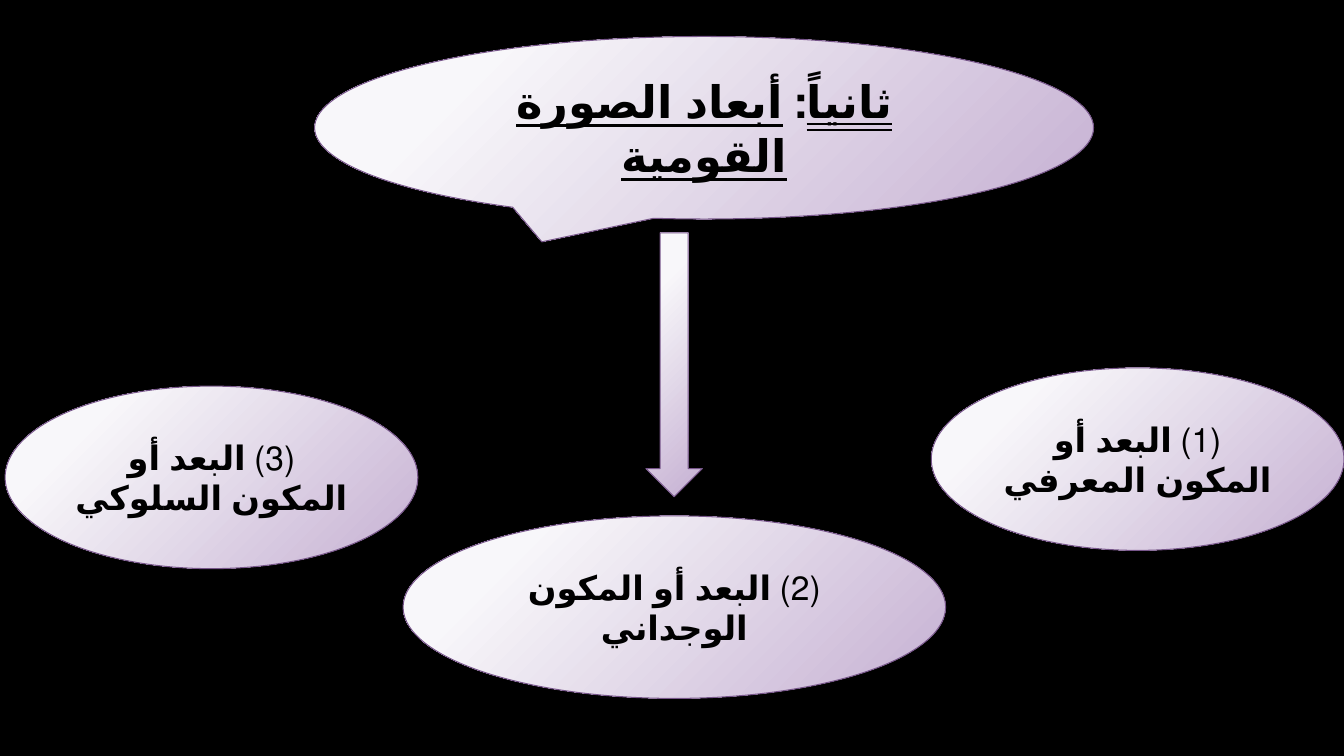
from dataclasses import dataclass

from pptx import Presentation
from pptx.dml.color import RGBColor
from pptx.enum.lang import MSO_LANGUAGE_ID
from pptx.enum.shapes import MSO_SHAPE
from pptx.enum.text import MSO_ANCHOR, MSO_UNDERLINE, PP_ALIGN
from pptx.oxml import parse_xml
from pptx.oxml.ns import nsdecls, qn
from pptx.util import Cm, Pt


@dataclass(frozen=True)
class Theme:
    background: RGBColor = RGBColor(0x00, 0x00, 0x00)
    text: RGBColor = RGBColor(0x00, 0x00, 0x00)
    outline: RGBColor = RGBColor(0x77, 0x56, 0x8A)
    stops: tuple = ((0.2, RGBColor(0xF8, 0xF7, 0xFA)),
                    (1.0, RGBColor(0xC5, 0xB0, 0xD2)))
    font: str = "TeX Gyre Pagella"
    title_size: Pt = Pt(32)
    label_size: Pt = Pt(24)


THEME = Theme()

GLOW_PATH = (f'<a:path {nsdecls("a")} path="circle">'
             '<a:fillToRect l="-15000" t="-15000" r="115000" b="115000"/></a:path>')
SOFT_SHADOW = (f'<a:outerShdw {nsdecls("a")} blurRad="130000" dist="101600" '
               'dir="2700000" algn="tl" rotWithShape="0">'
               '<a:srgbClr val="000000"><a:alpha val="35000"/></a:srgbClr></a:outerShdw>')


def add_glossy_shape(page, kind, left, top, width, height):
    """Add a shape with the lilac gradient, thin outline and soft shadow."""
    shape = page.shapes.add_shape(kind, Cm(left), Cm(top), Cm(width), Cm(height))
    shape.fill.gradient()
    for stop, (position, colour) in zip(shape.fill.gradient_stops, THEME.stops):
        stop.position = position
        stop.color.rgb = colour
    properties = shape._element.spPr
    gradient = properties.find(qn("a:gradFill"))
    gradient.replace(gradient.find(qn("a:lin")), parse_xml(GLOW_PATH))
    shape.line.color.rgb = THEME.outline
    shape.line.width = Pt(0.75)
    shape.shadow.inherit = False
    properties.find(qn("a:effectLst")).append(parse_xml(SOFT_SHADOW))
    return shape


def write_rtl(shape, size, spans):
    """Write one centred right-to-left paragraph of (text, bold, underline) spans."""
    frame = shape.text_frame
    frame.word_wrap = True
    frame.vertical_anchor = MSO_ANCHOR.MIDDLE
    para = frame.paragraphs[0]
    para.alignment = PP_ALIGN.CENTER
    para._p.get_or_add_pPr().set("rtl", "1")
    for text, bold, underline in spans:
        span = para.add_run()
        span.text = text
        span.font.language_id = MSO_LANGUAGE_ID.ARABIC_EGYPT
        span.font.name = THEME.font
        span.font.size = size
        span.font.color.rgb = THEME.text
        span.font.bold = bold
        span.font.underline = underline


def add_dimension(page, number, text, left, top, width):
    """Add a numbered ellipse."""
    ellipse = add_glossy_shape(page, MSO_SHAPE.OVAL, left, top, width, 4.6)
    write_rtl(ellipse, THEME.label_size,
              [(f"({number}) ", False, None), (text, True, None)])


def main():
    deck = Presentation()
    deck.slide_width, deck.slide_height = Cm(33.87), Cm(19.05)
    page = deck.slides.add_slide(deck.slide_layouts[6])
    page.background.fill.solid()
    page.background.fill.fore_color.rgb = THEME.background

    # Heading
    callout = add_glossy_shape(page, MSO_SHAPE.OVAL_CALLOUT, 7.93, 0.92, 19.63, 4.6)
    write_rtl(callout, THEME.title_size, [
        ("ثانياً", True, MSO_UNDERLINE.DOUBLE_LINE),
        (": ", True, False),
        ("أبعاد الصورة القومية", True, True),
    ])

    # Three dimensions
    dimensions = [
        ("البعد أو المكون المعرفي", 23.47, 9.27, 10.4),
        ("البعد أو المكون الوجداني", 10.16, 13.0, 13.67),
        ("البعد أو المكون السلوكي", 0.13, 9.73, 10.4),
    ]
    for number, dimension in enumerate(dimensions, start=1):
        add_dimension(page, number, *dimension)

    # Arrow from the heading to the middle dimension
    add_glossy_shape(page, MSO_SHAPE.DOWN_ARROW, 16.28, 5.87, 1.42, 6.65)

    deck.save("out.pptx")


if __name__ == "__main__":
    main()
